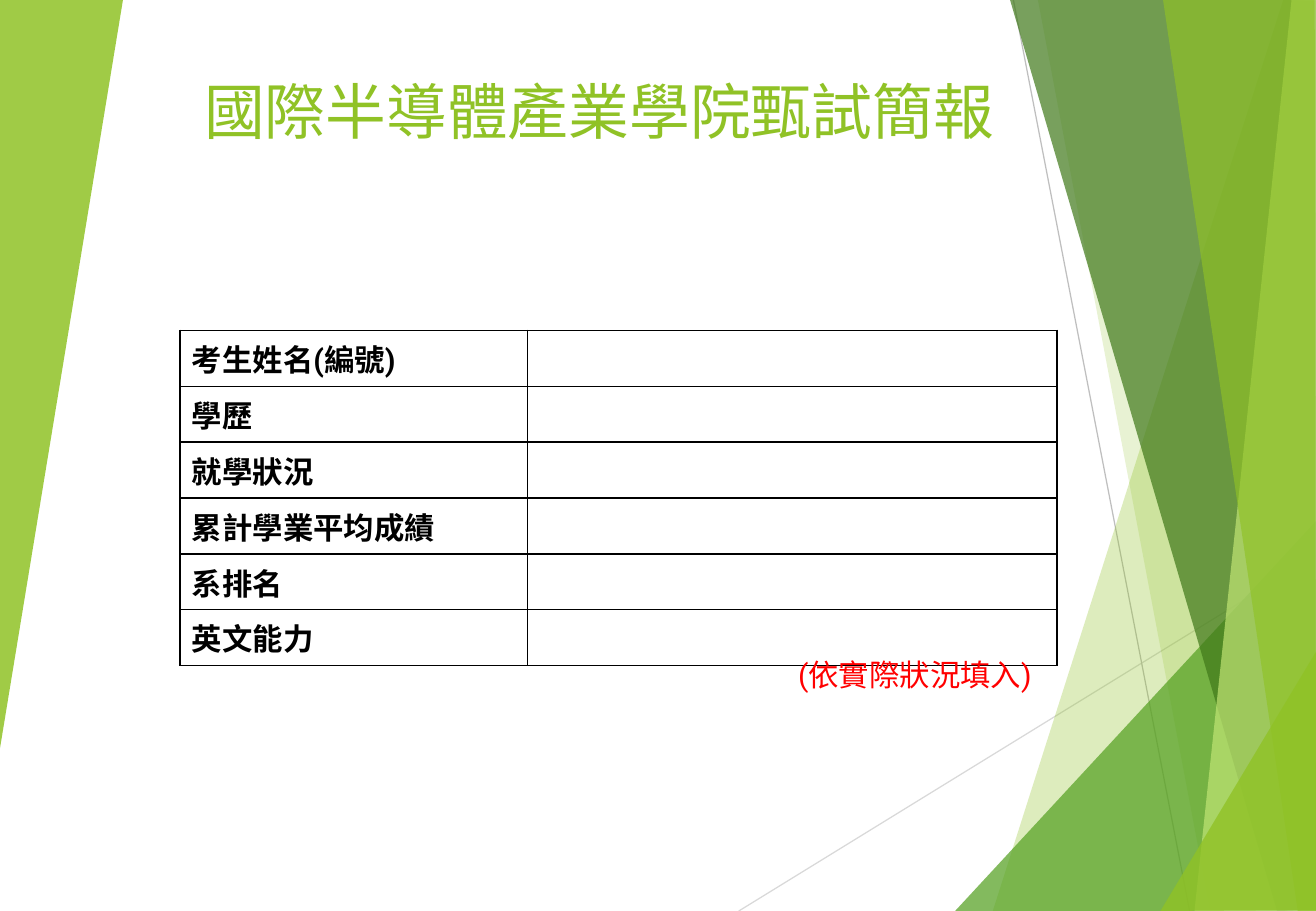
from pptx import Presentation
from pptx.dml.color import RGBColor
from pptx.enum.shapes import MSO_CONNECTOR
from pptx.enum.text import MSO_ANCHOR, MSO_AUTO_SIZE, PP_ALIGN
from pptx.oxml import parse_xml
from pptx.oxml.ns import nsdecls, qn
from pptx.util import Inches, Pt
from lxml import etree

GREEN = "90C226"
CJK_FONT = "Noto Sans CJK SC"

LINES = [
    ((6.08, 7.5), (10.84, 4.57), "D9D9D9"),
    ((8.34, 0), (9.79, 7.5), "BFBFBF"),
]

# Corner points, colour and opacity in percent, back to front
FACETS = [
    ([(10.56, 0), (8.17, 7.5), (10.85, 7.51), (10.84, 0.01)], GREEN, 30),
    ([(8.54, -0.01), (9.96, 7.5), (10.84, 7.5), (10.84, -0.01)], GREEN, 20),
    ([(7.86, 7.5), (10.83, 4.29), (10.84, 7.5)], "54A021", 72),
    ([(8.31, -0.01), (10.51, 7.5), (10.84, 7.49), (10.84, -0.01)], "3F7819", 70),
    ([(10.63, -0.01), (9.83, 7.5), (10.84, 7.5), (10.84, -0.01)], "C0E474", 70),
    ([(9.57, -0.01), (10.68, 7.5), (10.83, 7.5), (10.82, -0.01)], GREEN, 65),
    ([(9.55, 7.5), (10.84, 5.35), (10.85, 7.49)], GREEN, 80),
    ([(-0.01, 0), (1.01, -0.01), (1.01, 0.01), (-0.01, 6.22)], GREEN, 85),
]

FIELDS = ["考生姓名(編號)", "學歷", "就學狀況", "累計學業平均成績", "系排名", "英文能力"]


def rgb(color):
    return RGBColor.from_string(color)


def add_line(s, start, end, color):
    x1, y1, x2, y2 = [Inches(v) for v in start + end]
    line = s.shapes.add_connector(MSO_CONNECTOR.STRAIGHT, x1, y1, x2, y2)
    line.line.color.rgb = rgb(color)
    line.line.width = Pt(0.75)
    etree.SubElement(line._element.spPr, qn("a:effectLst"))


def add_facet(s, points, color, opacity):
    corners = [(Inches(x), Inches(y)) for x, y in points]
    builder = s.shapes.build_freeform(*corners[0])
    builder.add_line_segments(corners[1:], close=True)
    sp = builder.convert_to_shape()
    sp.shadow.inherit = False
    sp.fill.solid()
    sp.fill.fore_color.rgb = rgb(color)
    sp.line.fill.background()
    clr = sp._element.spPr.find(qn("a:solidFill"))[0]
    etree.SubElement(clr, qn("a:alpha"), val=str(opacity * 1000))


def add_run(p, text, size, font, color, bold=False):
    r = p.add_run()
    r.text = text
    r.font.size = Pt(size)
    r.font.name = font
    r.font.bold = bold
    r.font.color.rgb = rgb(color)
    return r


def add_text(s, box, text, size, font, color):
    sp = s.shapes.add_textbox(*[Inches(v) for v in box])
    tf = sp.text_frame
    tf.word_wrap = True
    add_run(tf.paragraphs[0], text, size, font, color)
    return tf


def set_borders(cell):
    tcPr = cell._tc.get_or_add_tcPr()
    for i, side in enumerate(("lnL", "lnR", "lnT", "lnB")):
        tcPr.insert(i, parse_xml(
            f'<a:{side} {nsdecls("a")} w="12700"><a:solidFill>'
            f'<a:srgbClr val="000000"/></a:solidFill></a:{side}>'))


def add_form(s, fields):
    row_height = Inches(0.46)
    frame = s.shapes.add_table(len(fields), 2, Inches(1.48), Inches(2.72),
                               Inches(7.22), row_height * len(fields))
    table = frame.table
    table.first_row = table.horz_banding = False
    table.columns[0].width = Inches(2.86)
    table.columns[1].width = Inches(4.36)
    for row, field in zip(table.rows, fields):
        row.height = row_height
        for cell in row.cells:
            cell.fill.solid()
            cell.fill.fore_color.rgb = rgb("FFFFFF")
            cell.vertical_anchor = MSO_ANCHOR.MIDDLE
            set_borders(cell)
        p = row.cells[0].text_frame.paragraphs[0]
        add_run(p, field, 18, "Roboto", "000000", bold=True)


def main():
    prs = Presentation()
    prs.slide_width, prs.slide_height = Inches(10.83), Inches(7.5)
    s = prs.slides.add_slide(prs.slide_layouts[6])

    # Background decoration
    for start, end, color in LINES:
        add_line(s, start, end, color)
    for points, color, opacity in FACETS:
        add_facet(s, points, color, opacity)

    # Title
    tf = add_text(s, (1.48, 0.39, 6.9, 0.87), "國際半導體產業學院甄試簡報",
                  36, CJK_FONT, GREEN)
    tf.vertical_anchor = MSO_ANCHOR.BOTTOM
    p = tf.paragraphs[0]
    p.alignment = PP_ALIGN.CENTER
    rPr = p.runs[0].font._element
    etree.SubElement(rPr, qn("a:ea"), typeface=CJK_FONT)

    # Candidate form
    add_form(s, FIELDS)

    # Hint below the form
    tf = add_text(s, (6.47, 5.35, 2.15, 0.4), "(依實際狀況填入)",
                  18, "Roboto", "FF0000")
    tf.auto_size = MSO_AUTO_SIZE.SHAPE_TO_FIT_TEXT

    prs.save("out.pptx")


if __name__ == "__main__":
    main()
